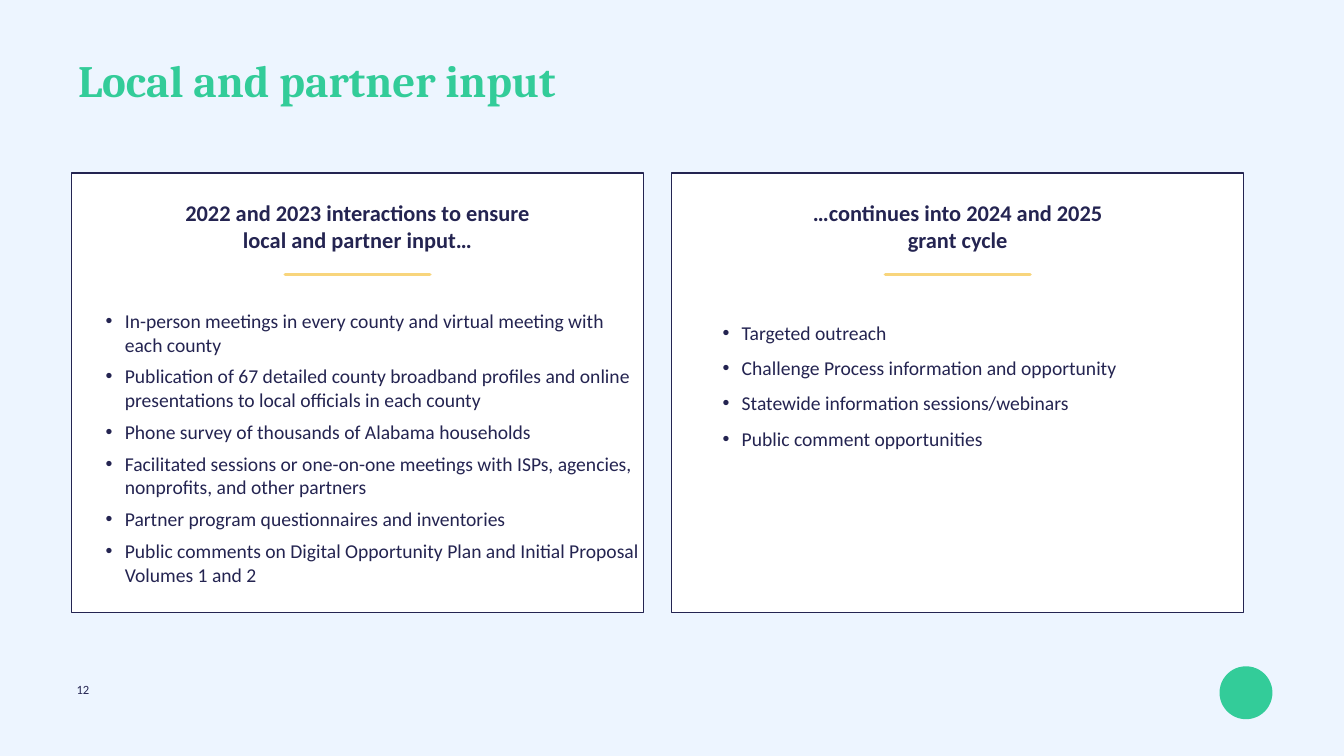
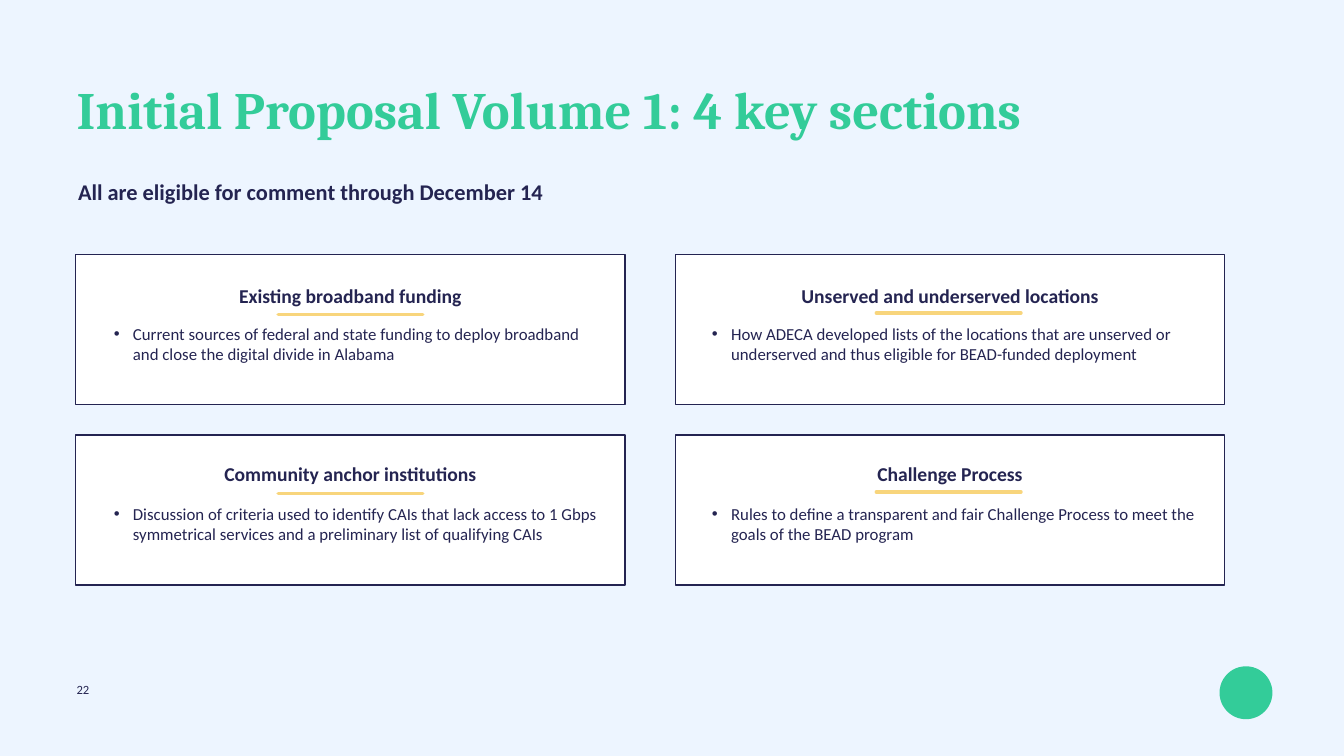
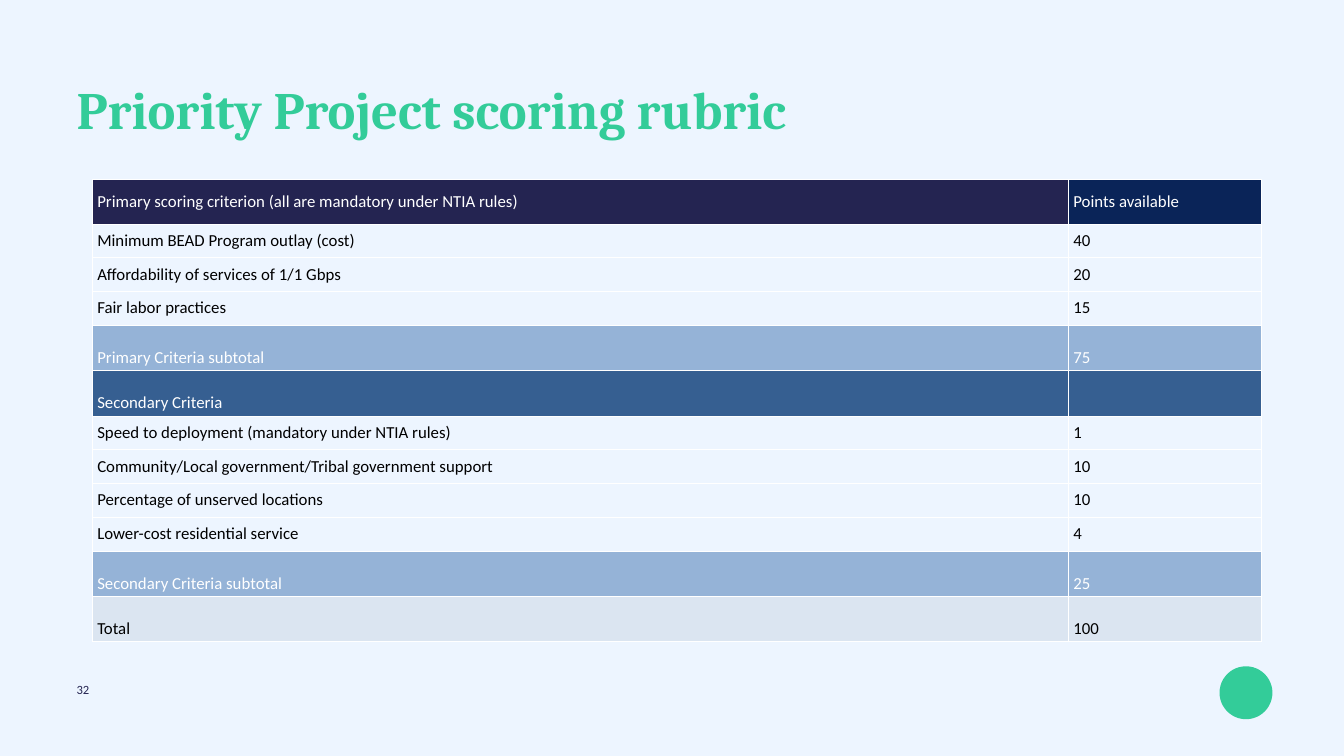
"""Build three slides on the broadband grant programme."""
from dataclasses import dataclass
from typing import Any, Optional

from lxml.etree import SubElement
from pptx import Presentation
from pptx.dml.color import RGBColor
from pptx.enum.shapes import MSO_CONNECTOR, MSO_SHAPE
from pptx.enum.text import MSO_ANCHOR, MSO_AUTO_SIZE, PP_ALIGN
from pptx.oxml.ns import qn
from pptx.util import Inches, Pt


@dataclass(frozen=True)
class Theme:
    background: str = "EDF5FF"
    green: str = "33CC99"
    navy: str = "242451"
    deep_navy: str = "0A2458"
    yellow: str = "F8D57C"
    white: str = "FFFFFF"
    black: str = "000000"
    subtotal_blue: str = "95B3D7"
    section_blue: str = "365F91"
    total_blue: str = "DBE5F1"
    title_font: str = "Cambria"
    body_font: str = "Calibri"
    large_title: float = 75
    title: float = 64
    heading: float = 32
    body: float = 28
    small_body: float = 24
    page_number: float = 18


THEME = Theme()


@dataclass(frozen=True)
class Box:
    left: float
    top: float
    width: float
    height: float

    def lengths(self) -> tuple:
        return tuple(Inches(value) for value in (self.left, self.top, self.width, self.height))


@dataclass(frozen=True)
class TextStyle:
    size: float
    bold: bool = False
    color: str = THEME.navy
    font: str = THEME.body_font
    alignment: PP_ALIGN = PP_ALIGN.LEFT
    line_spacing: float = 1.0
    space_after: float = 0
    bullet: bool = False
    grow: bool = True


@dataclass(frozen=True)
class Card:
    frame: Box
    heading: tuple
    heading_box: Box
    heading_style: TextStyle
    rule_left: float
    rule_top: float
    bullets: tuple
    bullet_box: Box
    bullet_style: TextStyle


@dataclass(frozen=True)
class RowStyle:
    height: float = 0.67
    color: str = THEME.black
    fills: tuple = (None, None)
    anchor: MSO_ANCHOR = MSO_ANCHOR.MIDDLE


TITLE = TextStyle(THEME.title, True, THEME.green, THEME.title_font, line_spacing=0.9)
LARGE_TITLE = TextStyle(THEME.large_title, True, THEME.green, THEME.title_font, line_spacing=0.9)
SUBTITLE = TextStyle(THEME.heading, True, line_spacing=1.31)
PAGE_NUMBER = TextStyle(THEME.page_number, line_spacing=0.9)
PANEL_HEADING = TextStyle(THEME.heading, True, alignment=PP_ALIGN.CENTER, grow=False)
CARD_HEADING = TextStyle(THEME.body, True, alignment=PP_ALIGN.CENTER, line_spacing=0.9)
PAST_BULLETS = TextStyle(THEME.body, space_after=12, bullet=True, grow=False)
NEXT_BULLETS = TextStyle(THEME.body, line_spacing=1.5, bullet=True, grow=False)
CARD_BULLETS = TextStyle(THEME.small_body, bullet=True)

TITLE_BOX = Box(1.45, 1.11, 23.76, 1.07)
LARGE_TITLE_BOX = Box(1.42, 1.63, 23.76, 1.24)
RULE_LENGTH = 2.87

HEADER = RowStyle(0.89, THEME.white, (THEME.navy, THEME.deep_navy))
CRITERION = RowStyle()
SUBTOTAL = RowStyle(0.9, THEME.white, (THEME.subtotal_blue,) * 2, MSO_ANCHOR.BOTTOM)
SECTION = RowStyle(0.9, THEME.white, (THEME.section_blue,) * 2, MSO_ANCHOR.BOTTOM)
TOTAL = RowStyle(0.9, THEME.black, (THEME.total_blue,) * 2, MSO_ANCHOR.BOTTOM)

PANELS = (
    (
        1.42,
        ("2022 and 2023 interactions to ensure", "local and partner input…"),
        (
            "In-person meetings in every county and virtual meeting with each county",
            "Publication of 67 detailed county broadband profiles and online presentations "
            "to local officials in each county",
            "Phone survey of thousands of Alabama households",
            "Facilitated sessions or one-on-one meetings with ISPs, agencies, nonprofits, "
            "and other partners",
            "Partner program questionnaires and inventories",
            "Public comments on Digital Opportunity Plan and Initial Proposal Volumes 1 and 2",
        ),
        Box(2, 6.08, 10.77, 5.82),
        PAST_BULLETS,
    ),
    (
        13.33,
        ("…continues into 2024 and 2025", "grant cycle"),
        (
            "Targeted outreach",
            "Challenge Process information and opportunity",
            "Statewide information sessions/webinars",
            "Public comment opportunities",
        ),
        Box(14.24, 6.08, 9.89, 4.35),
        NEXT_BULLETS,
    ),
)

SECTIONS = (
    ("Existing broadband funding",
     "Current sources of federal and state funding to deploy broadband and close the "
     "digital divide in Alabama"),
    ("Unserved and underserved locations",
     "How ADECA developed lists of the locations that are unserved or underserved and "
     "thus eligible for BEAD-funded deployment"),
    ("Community anchor institutions",
     "Discussion of criteria used to identify CAIs that lack access to 1 Gbps symmetrical "
     "services and a preliminary list of qualifying CAIs"),
    ("Challenge Process",
     "Rules to define a transparent and fair Challenge Process to meet the goals of the "
     "BEAD program"),
)

RUBRIC = (
    (HEADER, "Primary scoring criterion (all are mandatory under NTIA rules)", "Points available"),
    (CRITERION, "Minimum BEAD Program outlay (cost)", "40"),
    (CRITERION, "Affordability of services of 1/1 Gbps", "20"),
    (CRITERION, "Fair labor practices", "15"),
    (SUBTOTAL, "Primary Criteria subtotal", "75"),
    (SECTION, "Secondary Criteria", ""),
    (CRITERION, "Speed to deployment (mandatory under NTIA rules)", "1"),
    (CRITERION, "Community/Local government/Tribal government support", "10"),
    (CRITERION, "Percentage of unserved locations", "10"),
    (CRITERION, "Lower-cost residential service", "4"),
    (SUBTOTAL, "Secondary Criteria subtotal", "25"),
    (TOTAL, "Total", "100"),
)


def rgb(color: str) -> RGBColor:
    return RGBColor.from_string(color)


def set_attributes(target: Any, values: dict) -> None:
    for name, value in values.items():
        setattr(target, name, value)


def add_bullet(paragraph: Any, color: str) -> None:
    properties = paragraph._p.get_or_add_pPr()
    properties.set("marL", str(Inches(0.38)))
    properties.set("indent", str(Inches(-0.38)))
    bullet_color = SubElement(properties, qn("a:buClr"))
    SubElement(bullet_color, qn("a:srgbClr"), val=color)
    SubElement(properties, qn("a:buFont"), typeface="Arial")
    SubElement(properties, qn("a:buChar"), char="•")


def format_paragraph(paragraph: Any, text: str, style: TextStyle) -> None:
    if style.bullet:
        add_bullet(paragraph, style.color)
    set_attributes(paragraph, {
        "alignment": style.alignment,
        "line_spacing": style.line_spacing,
        "space_after": Pt(style.space_after),
    })
    run = paragraph.add_run()
    run.text = text
    set_attributes(run.font, {"name": style.font, "size": Pt(style.size), "bold": style.bold})
    run.font.color.rgb = rgb(style.color)


def add_text(slide: Any, box: Box, lines: tuple, style: TextStyle) -> None:
    frame = slide.shapes.add_textbox(*box.lengths()).text_frame
    set_attributes(frame, {
        "word_wrap": True,
        "auto_size": MSO_AUTO_SIZE.SHAPE_TO_FIT_TEXT if style.grow else MSO_AUTO_SIZE.NONE,
    })
    for index, line in enumerate(lines):
        paragraph = frame.add_paragraph() if index else frame.paragraphs[0]
        format_paragraph(paragraph, line, style)


def add_filled_shape(slide: Any, kind: MSO_SHAPE, box: Box, fill: str,
                     outline: Optional[str] = None) -> None:
    shape = slide.shapes.add_shape(kind, *box.lengths())
    shape.shadow.inherit = False
    shape.fill.solid()
    shape.fill.fore_color.rgb = rgb(fill)
    if outline:
        shape.line.color.rgb = rgb(outline)
        shape.line.width = Pt(2)
    else:
        shape.line.fill.background()


def add_rule(slide: Any, left: float, top: float) -> None:
    ends = (Inches(value) for value in (left + RULE_LENGTH, top, left, top))
    rule = slide.shapes.add_connector(MSO_CONNECTOR.STRAIGHT, *ends)
    rule.line.color.rgb = rgb(THEME.yellow)
    rule.line.width = Pt(5)
    rule.line._get_or_add_ln().set("cap", "rnd")
    SubElement(rule._element.spPr, qn("a:effectLst"))


def add_card(slide: Any, card: Card) -> None:
    add_filled_shape(slide, MSO_SHAPE.RECTANGLE, card.frame, THEME.white, THEME.navy)
    add_text(slide, card.heading_box, card.heading, card.heading_style)
    add_text(slide, card.bullet_box, card.bullets, card.bullet_style)
    add_rule(slide, card.rule_left, card.rule_top)


def add_slide(presentation: Any, number: int, title: str, box: Box, style: TextStyle) -> Any:
    slide = presentation.slides.add_slide(presentation.slide_layouts[6])
    add_filled_shape(slide, MSO_SHAPE.OVAL, Box(24.2, 13.22, 1.05, 1.05), THEME.green)
    add_text(slide, Box(1.42, 13.52, 19.18, 0.37), (str(number),), PAGE_NUMBER)
    add_text(slide, box, (title,), style)
    return slide


def format_cell(cell: Any, text: str, row_style: RowStyle, fill: Optional[str]) -> None:
    cell.vertical_anchor = row_style.anchor
    properties = cell._tc.get_or_add_tcPr()
    for side in ("lnL", "lnR", "lnT", "lnB"):
        border = SubElement(properties, qn(f"a:{side}"), w=str(Pt(0.75)))
        SubElement(SubElement(border, qn("a:solidFill")), qn("a:srgbClr"), val=THEME.white)
    if fill:
        cell.fill.solid()
        cell.fill.fore_color.rgb = rgb(fill)
    else:
        cell.fill.background()
    if text:
        style = TextStyle(THEME.small_body, color=row_style.color)
        format_paragraph(cell.text_frame.paragraphs[0], text, style)


def add_rubric(slide: Any, box: Box, widths: tuple) -> None:
    table = slide.shapes.add_table(len(RUBRIC), len(widths), *box.lengths()).table
    set_attributes(table, {"first_row": False, "horz_banding": False})
    for column, width in zip(table.columns, widths):
        column.width = Inches(width)
    for row, (row_style, *texts) in zip(table.rows, RUBRIC):
        row.height = Inches(row_style.height)
        for cell, text, fill in zip(row.cells, texts, row_style.fills):
            format_cell(cell, text, row_style, fill)


def build_input_slide(presentation: Any) -> None:
    slide = add_slide(presentation, 12, "Local and partner input", TITLE_BOX, TITLE)
    for left, heading, bullets, bullet_box, bullet_style in PANELS:
        add_card(slide, Card(
            Box(left, 3.43, 11.35, 8.72),
            heading, Box(left, 3.9, 11.35, 1.71), PANEL_HEADING,
            left + 4.24, 5.45,
            bullets, bullet_box, bullet_style,
        ))


def build_sections_slide(presentation: Any) -> None:
    title = "Initial Proposal Volume 1: 4 key sections"
    slide = add_slide(presentation, 22, title, LARGE_TITLE_BOX, LARGE_TITLE)
    add_text(slide, Box(1.45, 3.32, 23.77, 0.81),
             ("All are eligible for comment through December 14",), SUBTITLE)
    for index, (heading, bullet) in enumerate(SECTIONS):
        row, column = divmod(index, 2)
        left, top = 1.5 + 11.9 * column, 5.05 + 3.58 * row
        add_card(slide, Card(
            Box(left, top, 10.9, 2.98),
            (heading,), Box(left, 5.63 + 3.53 * row, 10.9, 0.53), CARD_HEADING,
            5.52 + 11.87 * column, 6.24 + 3.55 * row - 0.03 * column,
            (bullet,), Box(2.16 + 11.87 * column, top + 1.32, 9.9, 0.91), CARD_BULLETS,
        ))


def build_rubric_slide(presentation: Any) -> None:
    slide = add_slide(presentation, 32, "Priority Project scoring rubric",
                      LARGE_TITLE_BOX, LARGE_TITLE)
    add_rubric(slide, Box(1.83, 3.55, 23.19, 9.16), (19.37, 3.82))


def main() -> None:
    presentation = Presentation()
    set_attributes(presentation, {"slide_width": Inches(26.67), "slide_height": Inches(15)})
    background = presentation.slide_master.background.fill
    background.solid()
    background.fore_color.rgb = rgb(THEME.background)
    build_input_slide(presentation)
    build_sections_slide(presentation)
    build_rubric_slide(presentation)
    presentation.save("out.pptx")


if __name__ == "__main__":
    main()
